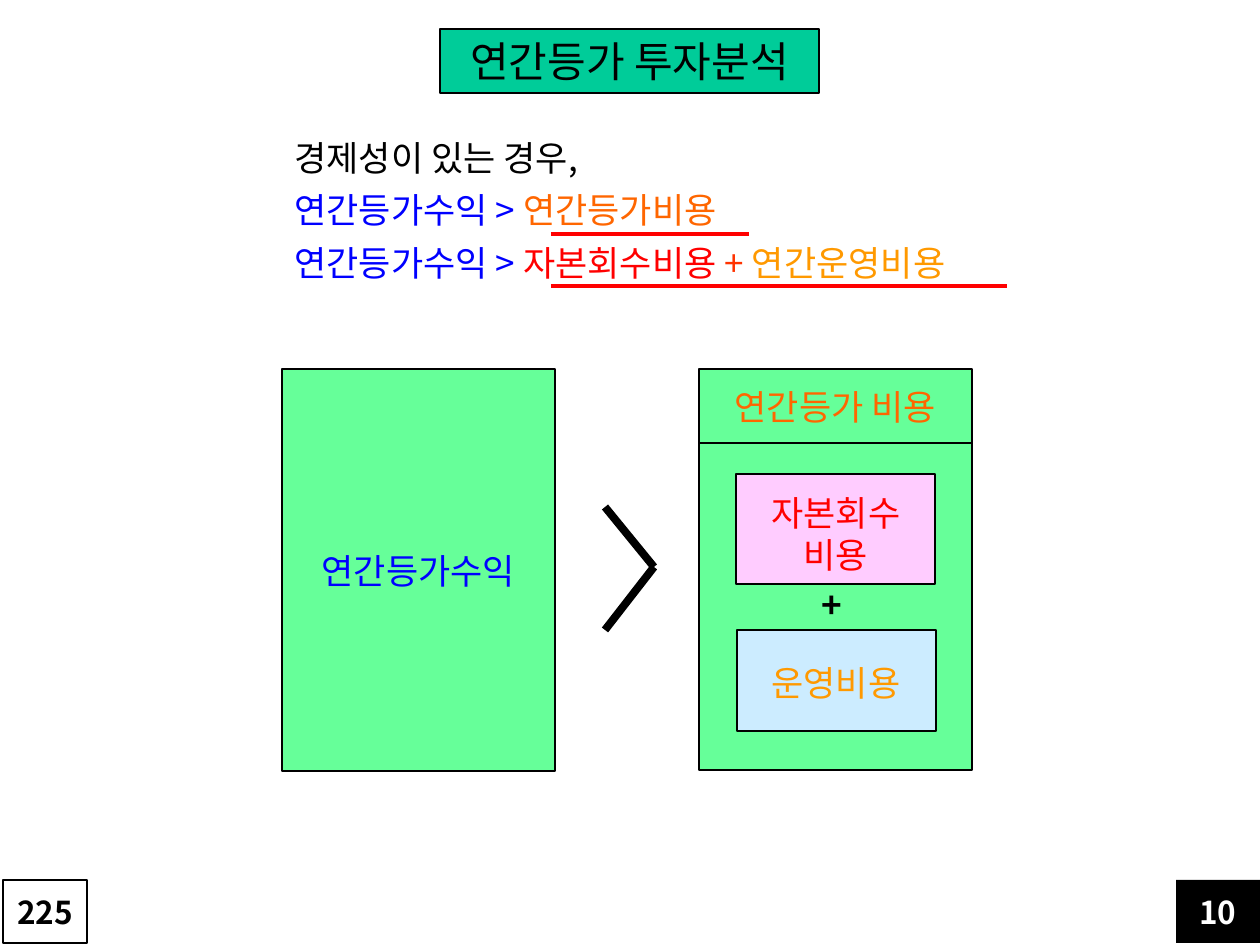
from lxml import etree
from pptx import Presentation
from pptx import util as u
from pptx.dml.color import RGBColor
from pptx.enum import shapes, text
from pptx.oxml.ns import qn

PX = 7257.14  # EMU per px, 126 px to the inch
FONT = "Noto Sans CJK KR"
COLORS = {
    "black": "000000", "white": "FFFFFF", "teal": "00CC99", "green": "66FF99",
    "pink": "FFCCFF", "sky": "CCECFF", "blue": "0000FF", "red": "FF0000",
    "scarlet": "FF3300", "orange": "FF6600", "amber": "FF9900",
}


def format_run(r, color, size=20, bold=False):
    r.font.size, r.font.bold, r.font.name = u.Pt(size), bold, FONT
    r.font.color.rgb = RGBColor.from_string(COLORS[color])
    ea = etree.SubElement(r.font._element, qn("a:ea"))
    ea.set("typeface", FONT)


def fill_box(sp, fill, line, label="", color="black", size=20, bold=False):
    """Paint a shape and centre its label; fill or line may be None."""
    if fill:
        sp.fill.solid()
        sp.fill.fore_color.rgb = RGBColor.from_string(COLORS[fill])
    if line:
        sp.line.color.rgb = RGBColor.from_string(COLORS[line])
        sp.line.width = u.Pt(0.75)
    else:
        sp.line.fill.background()
    tf = sp.text_frame
    tf.text = label
    tf.word_wrap = False
    tf.auto_size = text.MSO_AUTO_SIZE.NONE
    tf.vertical_anchor = text.MSO_ANCHOR.MIDDLE
    for p in tf.paragraphs:
        p.alignment = text.PP_ALIGN.CENTER
        for r in p.runs:
            format_run(r, color, size, bold)


prs = Presentation()
prs.slide_width, prs.slide_height = u.Inches(10), u.Inches(7.5)
s = prs.slides.add_slide(prs.slide_layouts[5])

# Title
title = s.shapes.title
title.left, title.top, title.width, title.height = [
    round(v * PX) for v in (440, 29, 379, 64)]
fill_box(title, "teal", "black", "연간등가 투자분석", size=24)

# Boxes of the comparison and the page numbers: x, y, w, h, fill, line, label...
boxes = [
    (282, 369, 273, 402, "green", "black", "연간등가수익", "blue"),
    (699, 442, 273, 328, "green", "black"),
    (699, 369, 273, 74, "green", "black", "연간등가 비용", "orange"),
    (736, 474, 199, 110, "pink", "black"),
    (737, 630, 199, 101, "sky", "black"),
    (1176, 880, 84, 63, "black", None, "10", "white", 18, True),
    (3, 880, 84, 63, "white", "black", "225", "black", 18, True),
]
for x, y, w, h, *style in boxes:
    sp = s.shapes.add_shape(shapes.MSO_SHAPE.RECTANGLE,
                            *[round(v * PX) for v in (x, y, w, h)])
    sp.shadow.inherit = False
    fill_box(sp, *style)

# Cost labels
labels = [
    (753, 485, 166, 97, "자본회수\n비용", "red"),
    (753, 655, 166, 55, "운영비용", "amber"),
    (809, 577, 45, 55, "+", "black", 20, True),
]
for x, y, w, h, *style in labels:
    sp = s.shapes.add_textbox(*[round(v * PX) for v in (x, y, w, h)])
    fill_box(sp, None, None, *style)

# Conditions
conditions = [
    [("경제성이 있는 경우,", "black")],
    [("연간등가수익 > ", "blue"), ("연간등가비용", "orange")],
    [("연간등가수익 > ", "blue"), ("자본회수비용 ", "red"), ("+ ", "scarlet"),
     ("연간운영비용", "amber")],
]
tf = s.shapes.add_textbox(*[round(v * PX) for v in (282, 130, 745, 161)]).text_frame
tf.word_wrap = True
for i, parts in enumerate(conditions):
    p = tf.paragraphs[0] if i == 0 else tf.add_paragraph()
    p.space_after = u.Pt(6)
    for wording, color in parts:
        r = p.add_run()
        r.text = wording
        format_run(r, color)

# Greater-than sign and underlines
lines = [
    (605, 507, 654, 567, "black", 4.5),
    (654, 567, 605, 630, "black", 4.5),
    (551, 234, 749, 234, "red", 2.25),
    (551, 286, 1007, 286, "red", 2.25),
]
for x1, y1, x2, y2, color, width in lines:
    c = s.shapes.add_connector(shapes.MSO_CONNECTOR.STRAIGHT,
                               *[round(v * PX) for v in (x1, y1, x2, y2)])
    c.line.color.rgb = RGBColor.from_string(COLORS[color])
    c.line.width = u.Pt(width)
    etree.SubElement(c._element.spPr, qn("a:effectLst"))

prs.save("out.pptx")
